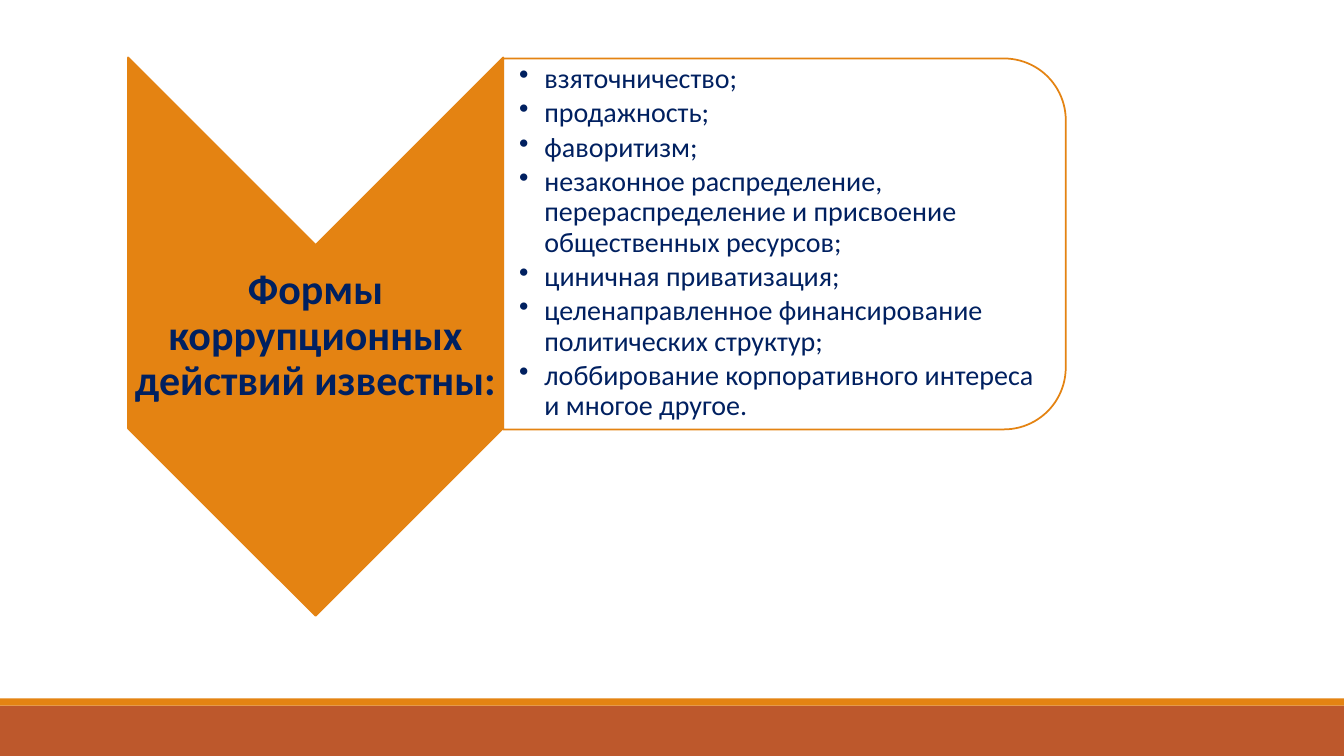
from lxml import etree
from pptx import Presentation
from pptx.dml.color import RGBColor
from pptx.enum.shapes import MSO_SHAPE
from pptx.enum.text import MSO_ANCHOR, MSO_AUTO_SIZE, PP_ALIGN
from pptx.oxml.ns import qn
from pptx.util import Inches, Pt

RECT = MSO_SHAPE.RECTANGLE
CHEVRON = MSO_SHAPE.CHEVRON
ROUND_TOP = MSO_SHAPE.ROUND_2_SAME_RECTANGLE
MIDDLE = MSO_ANCHOR.MIDDLE
NO_FIT = MSO_AUTO_SIZE.NONE
LEFT, CENTER = PP_ALIGN.LEFT, PP_ALIGN.CENTER

ORANGE, RUST, NAVY, WHITE = "E48312", "BD582C", "002060", "FFFFFF"
TITLE = "Формы коррупционных действий известны:"
FORMS = [
    "взяточничество;",
    "продажность;",
    "фаворитизм;",
    "незаконное распределение, перераспределение и присвоение общественных ресурсов;",
    "циничная приватизация;",
    "целенаправленное финансирование политических структур;",
    "лоббирование корпоративного интереса и многое другое.",
]


def color(hex_value):
    return RGBColor.from_string(hex_value)


class SlideBuilder:
    font = "Calibri"
    text_color = NAVY

    def __init__(self, s):
        self.s = s

    def shape(self, kind, box, fill, line=None, rotation=0, opacity=None):
        sp = self.s.shapes.add_shape(kind, *map(Inches, box))
        sp.shadow.inherit = False
        sp.rotation = rotation
        sp.fill.solid()
        sp.fill.fore_color.rgb = color(fill)
        if opacity is not None:
            clr = sp.element.spPr.find(qn("a:solidFill"))[0]
            etree.SubElement(clr, qn("a:alpha"), val=str(opacity * 1000))
        if line:
            sp.line.color.rgb = color(line)
            sp.line.width = Pt(1.25)
        else:
            sp.line.fill.background()
        return sp

    def frame(self, sp, left_inset, inset):
        tf = sp.text_frame
        tf.word_wrap = True
        tf.auto_size = NO_FIT
        tf.vertical_anchor = MIDDLE
        tf.margin_left = Inches(left_inset)
        tf.margin_top = tf.margin_right = tf.margin_bottom = Inches(inset)
        return tf

    def paragraph(self, p, text, size, align, bold=False):
        p.text = text
        p.alignment = align
        p.line_spacing = 0.9
        p.font.name = self.font
        p.font.size = Pt(size)
        p.font.bold = bold
        p.font.color.rgb = color(self.text_color)

    def title(self, box, text, size):
        sp = self.s.shapes.title
        sp.left, sp.top, sp.width, sp.height = map(Inches, box)
        # Bring the title in front of the chevron
        self.s.shapes.element.append(sp.element)
        tf = self.frame(sp, 0.02, 0.02)
        self.paragraph(tf.paragraphs[0], text, size, CENTER, bold=True)

    def bullets(self, box, items, size):
        tf = self.frame(self.s.shapes.add_textbox(*map(Inches, box)), 0.16, 0.01)
        for i, item in enumerate(items):
            p = tf.add_paragraph() if i else tf.paragraphs[0]
            self.paragraph(p, item, size, LEFT)
            p.space_after = Pt(size * 0.15)
            pPr = p._p.get_or_add_pPr()
            pPr.set("marL", str(Inches(0.25)))
            pPr.set("indent", str(Inches(-0.25)))
            bullet = etree.Element(qn("a:buChar"), char="•")
            pPr.find(qn("a:defRPr")).addprevious(bullet)


def main():
    prs = Presentation()
    prs.slide_width, prs.slide_height = Inches(13.33), Inches(7.5)
    layout = prs.slide_layouts.get_by_name("Title Only")
    b = SlideBuilder(prs.slides.add_slide(layout))

    # Footer bands
    b.shape(RECT, (0, 7, 13.33, 0.5), RUST)
    b.shape(RECT, (0, 6.93, 13.33, 0.07), ORANGE)

    # Chevron with the title
    b.shape(CHEVRON, (0.36, 1.48, 5.54, 3.72), ORANGE, ORANGE, rotation=90)
    b.title((1.27, 2.43, 3.72, 1.82), TITLE, 30)

    # Panel with the list of forms
    b.shape(ROUND_TOP, (5.94, -0.37, 3.68, 5.58), WHITE, ORANGE, rotation=90, opacity=90)
    b.bullets((4.99, 0.75, 5.4, 3.32), FORMS, 20)

    prs.save("out.pptx")


if __name__ == "__main__":
    main()
